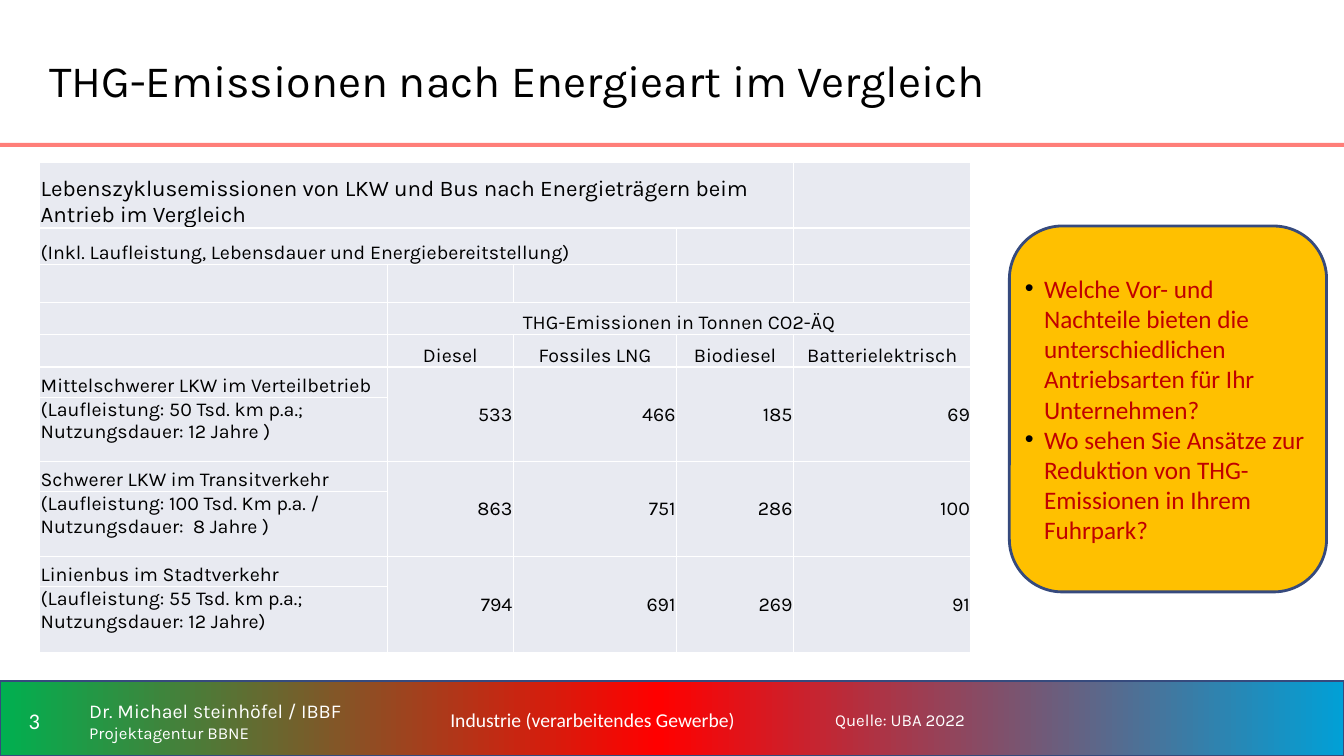
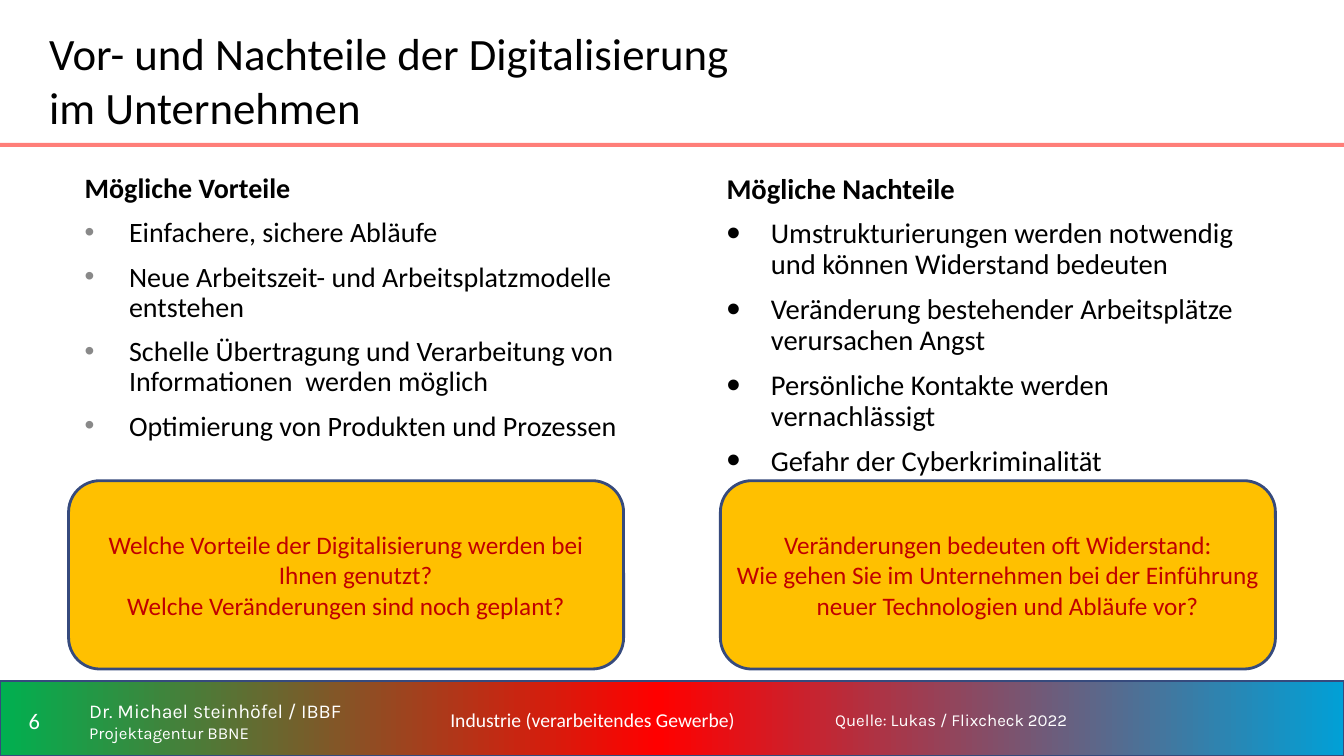
from copy import deepcopy

from lxml import etree
from pptx import Presentation, util as u
from pptx.dml.color import RGBColor
from pptx.enum import shapes, text
from pptx.oxml.ns import qn

INK = {
    "black": "000000", "white": "FFFFFF", "grey": "898989", "cell": "E8EAF1",
    "green": "00B050", "red": "FF0000", "blue": "01A0D6", "edge": "364A7D",
    "rule": "FF7E79", "gold": "FFC000", "wine": "C00000",
}
PAGE = (0, 0, u.Inches(13.33), u.Inches(7.5))
SANS, KARLA = "Calibri", "Karla"
LEFT, MID, RIGHT = text.PP_ALIGN.LEFT, text.PP_ALIGN.CENTER, text.PP_ALIGN.RIGHT
TOP, CORE, LOW = text.MSO_ANCHOR.TOP, text.MSO_ANCHOR.MIDDLE, text.MSO_ANCHOR.BOTTOM

# Table: column and row weights, and the vehicles with their values
COLS = (3.45, 1.25, 1.62, 1.16, 1.76)
ROWS = (0.65, 0.36, 0.38, 0.32, 0.32) + (0.3, 0.64) * 2 + (0.3, 0.66)
FUELS = ("Diesel", "Fossiles LNG", "Biodiesel", "Batterielektrisch")
FLEET = (
    ("Mittelschwerer LKW im Verteilbetrieb",
     "(Laufleistung: 50 Tsd. km p.a.; Nutzungsdauer: 12 Jahre )", (533, 466, 185, 69)),
    ("Schwerer LKW im Transitverkehr",
     "(Laufleistung: 100 Tsd. Km p.a. / Nutzungsdauer:  8 Jahre )", (863, 751, 286, 100)),
    ("Linienbus im Stadtverkehr",
     "(Laufleistung: 55 Tsd. km p.a.; Nutzungsdauer: 12 Jahre)", (794, 691, 269, 91)),
)


def rgb(name):
    return RGBColor.from_string(INK[name])


def part(box, x, y, w, h):
    """Box at percent shares of another box."""
    left, top, wide, high = box
    return (int(left + wide * x / 100), int(top + high * y / 100),
            int(wide * w / 100), int(high * h / 100))


def move(shape, box):
    shape.left, shape.top, shape.width, shape.height = box


def style(par, size, face=SANS, color="black", align=LEFT, bold=False):
    par.alignment = align
    font = par.font
    font.size, font.name, font.bold = u.Pt(size), face, bold
    font.color.rgb = rgb(color)


def indent(par, left, hang=0, mark=None, tint="black", scale=100):
    """Paragraph indent in inches, with or without a bullet."""
    props = par._p.get_or_add_pPr()
    props.set("marL", str(u.Inches(left)))
    props.set("indent", str(-u.Inches(hang)))
    if not mark:
        etree.SubElement(props, qn("a:buNone"))
        return
    paint = etree.SubElement(props, qn("a:buClr"))
    etree.SubElement(paint, qn("a:srgbClr"), val=INK[tint])
    etree.SubElement(props, qn("a:buSzPct"), val=str(scale * 1000))
    etree.SubElement(props, qn("a:buFont"), typeface="Arial")
    etree.SubElement(props, qn("a:buChar"), char=mark)


def lines(frame, items):
    """Fill a frame with one paragraph per item and yield each of them."""
    for i, item in enumerate(items):
        par = frame.add_paragraph() if i else frame.paragraphs[0]
        par.text = item
        yield par


def shape(slide, kind, box, fill=None, edge=None, width=1):
    item = slide.shapes.add_shape(kind, *box)
    item.shadow.inherit = False
    if fill:
        item.fill.solid()
        item.fill.fore_color.rgb = rgb(fill)
    if edge:
        item.line.color.rgb = rgb(edge)
        item.line.width = u.Pt(width)
    else:
        item.line.fill.background()
    return item


def label(slide, box, words, size, face=SANS, align=LEFT):
    frame = slide.shapes.add_textbox(*box).text_frame
    frame.word_wrap, frame.vertical_anchor = True, CORE
    for par in lines(frame, words):
        style(par, size, face, "white", align)
    return frame


def title(slide, box, words, face):
    item = slide.shapes.title
    move(item, box)
    frame = item.text_frame
    frame.text = words
    frame.auto_size = text.MSO_AUTO_SIZE.NONE
    frame.vertical_anchor = CORE
    style(frame.paragraphs[0], 32, face)


def footer(slide, box, page, source):
    # Gradient band
    band = shape(slide, shapes.MSO_SHAPE.RECTANGLE, box, edge="edge")
    band.fill.gradient()
    band.fill.gradient_angle = 0
    stop = band._element.spPr.find(".//" + qn("a:gs"))
    stop.addnext(deepcopy(stop))
    hues = ((0, "green"), (0.49, "red"), (1, "blue"))
    for stop, (spot, hue) in zip(band.fill.gradient_stops, hues):
        stop.position = spot
        stop.color.rgb = rgb(hue)
    # Page number, author, sector, source
    label(slide, part(box, 0, 11, 5.1, 82), [page], 16, align=MID)
    name = label(slide, part(box, 5.9, 11, 20.9, 84), ["", "Projektagentur BBNE"], 12, KARLA)
    head = name.paragraphs[0]
    for piece, size in (("Dr. Michael ", 14), ("S", 12), ("teinhöfel / IBBF", 14)):
        run = head.add_run()
        run.text, run.font.size = piece, u.Pt(size)
    label(slide, part(box, 29.3, 11, 29.6, 82),
          ["Industrie (verarbeitendes Gewerbe)"], 14, align=MID)
    label(slide, part(box, 61.4, 11, 36, 82), [source], 12, KARLA)


def base(prs, layout, words, face, page, source):
    """Slide with the shared title, rule and footer."""
    slide = prs.slides.add_slide(prs.slide_layouts[layout])
    title(slide, part(PAGE, 2.9, 2.7, 75, 15.7), words, face)
    shape(slide, shapes.MSO_SHAPE.RECTANGLE, part(PAGE, 0, 18.9, 100, 0.55), "rule")
    footer(slide, part(PAGE, 0, 90.1, 100, 9.9), page, source)
    return slide


def callout(slide, box, words, align=MID, mark=None):
    item = shape(slide, shapes.MSO_SHAPE.ROUNDED_RECTANGLE, box, "gold", "edge", 2)
    frame = item.text_frame
    frame.margin_left = frame.margin_right = frame.margin_top = frame.margin_bottom = 0
    frame.word_wrap, frame.vertical_anchor = True, CORE
    for par in lines(frame, words):
        indent(par, 0.19, 0.19, mark)
        style(par, 18, color="wine", align=align)


def grid(slide, box):
    """Emissions table, sized by column and row weights."""
    table = slide.shapes.add_table(len(ROWS), len(COLS), *box).table
    table.first_row = table.horz_banding = False
    for col, share in zip(table.columns, COLS):
        col.width = int(box[2] * share / sum(COLS))
    for row, share in zip(table.rows, ROWS):
        row.height = int(box[3] * share / sum(ROWS))
    for cell in table.iter_cells():
        cell.fill.solid()
        cell.fill.fore_color.rgb = rgb("cell")
        cell.margin_left = cell.margin_right = cell.margin_top = u.Inches(0.01)
        cell.margin_bottom = 0

    def put(row, col, words, align=LEFT, anchor=LOW, size=14, down=0, over=0):
        cell = table.cell(row, col)
        if down or over:
            cell.merge(table.cell(row + down, col + over))
        cell.text, cell.vertical_anchor = words, anchor
        style(cell.text_frame.paragraphs[0], size, KARLA, align=align)

    # Headings
    put(0, 0, "Lebenszyklusemissionen von LKW und Bus nach Energieträgern beim "
        "Antrieb im Vergleich", size=16, over=3)
    put(1, 0, "(Inkl. Laufleistung, Lebensdauer und Energiebereitstellung)", over=2)
    put(3, 1, "THG-Emissionen in Tonnen CO2-ÄQ", MID, over=3)
    for col, fuel in enumerate(FUELS, 1):
        put(4, col, fuel, MID)
    # Vehicles, two rows each
    for i, (name, note, values) in enumerate(FLEET):
        row = 5 + 2 * i
        put(row, 0, name)
        put(row + 1, 0, note, anchor=TOP)
        for col, value in enumerate(values, 1):
            put(row, col, str(value), RIGHT, CORE, down=1)


def column(slide, box, body, span, words, size, tint, scale, asks):
    """Headed list in a body placeholder above a callout."""
    x, wide = span
    move(body, part(box, x, 0, wide, 60.3))
    frame = body.text_frame
    frame.auto_size = text.MSO_AUTO_SIZE.NONE
    for i, par in enumerate(lines(frame, words)):
        if i:
            indent(par, 0.5, 0.44, "•", tint, scale)
        else:
            indent(par, 0.06)
        par.space_before = u.Pt(10 if i else 0)
        par.line_spacing = 0.9
        style(par, size, bold=not i)
    callout(slide, part(box, 0, 62.3, 100, 37.7), asks)


def fuels(prs):
    slide = base(prs, 5, "THG-Emissionen nach Energieart im Vergleich", KARLA,
                 "3", "Quelle: UBA 2022")
    grid(slide, part(PAGE, 2.95, 21.5, 69.3, 64.9))
    callout(slide, part(PAGE, 75.1, 29.9, 23.6, 48.4), (
        "Welche Vor- und Nachteile bieten die unterschiedlichen Antriebsarten "
        "für Ihr Unternehmen?",
        "Wo sehen Sie Ansätze zur Reduktion von THG-Emissionen in Ihrem Fuhrpark?",
    ), LEFT, "•")


def digital(prs):
    slide = base(prs, 3, "Vor- und Nachteile der Digitalisierung\vim Unternehmen", SANS,
                 "6", "Quelle: Lukas / Flixcheck 2022")
    pros, cons = slide.placeholders[1], slide.placeholders[2]
    column(slide, part(PAGE, 5.1, 22.4, 41.3, 66.1), pros, (0, 109), (
        "Mögliche Vorteile",
        "Einfachere, sichere Abläufe",
        "Neue Arbeitszeit- und Arbeitsplatzmodelle entstehen",
        "Schelle Übertragung und Verarbeitung von Informationen  werden möglich",
        "Optimierung von Produkten und Prozessen",
    ), 20, "grey", 100, (
        "Welche Vorteile der Digitalisierung werden bei Ihnen genutzt?",
        "Welche Veränderungen sind noch geplant?",
    ))
    column(slide, part(PAGE, 53.6, 22.4, 41.3, 66.1), cons, (-1.8, 103.6), (
        "Mögliche Nachteile",
        "Umstrukturierungen werden notwendig und können Widerstand bedeuten",
        "Veränderung bestehender Arbeitsplätze verursachen Angst",
        "Persönliche Kontakte werden vernachlässigt",
        "Gefahr der Cyberkriminalität",
    ), 20.4, "black", 138, (
        "Veränderungen bedeuten oft Widerstand:",
        "Wie gehen Sie im Unternehmen bei der Einführung neuer Technologien "
        "und Abläufe vor?",
    ))


def main():
    prs = Presentation()
    prs.slide_width, prs.slide_height = PAGE[2:]
    fuels(prs)
    digital(prs)
    prs.save("out.pptx")


if __name__ == "__main__":
    main()
